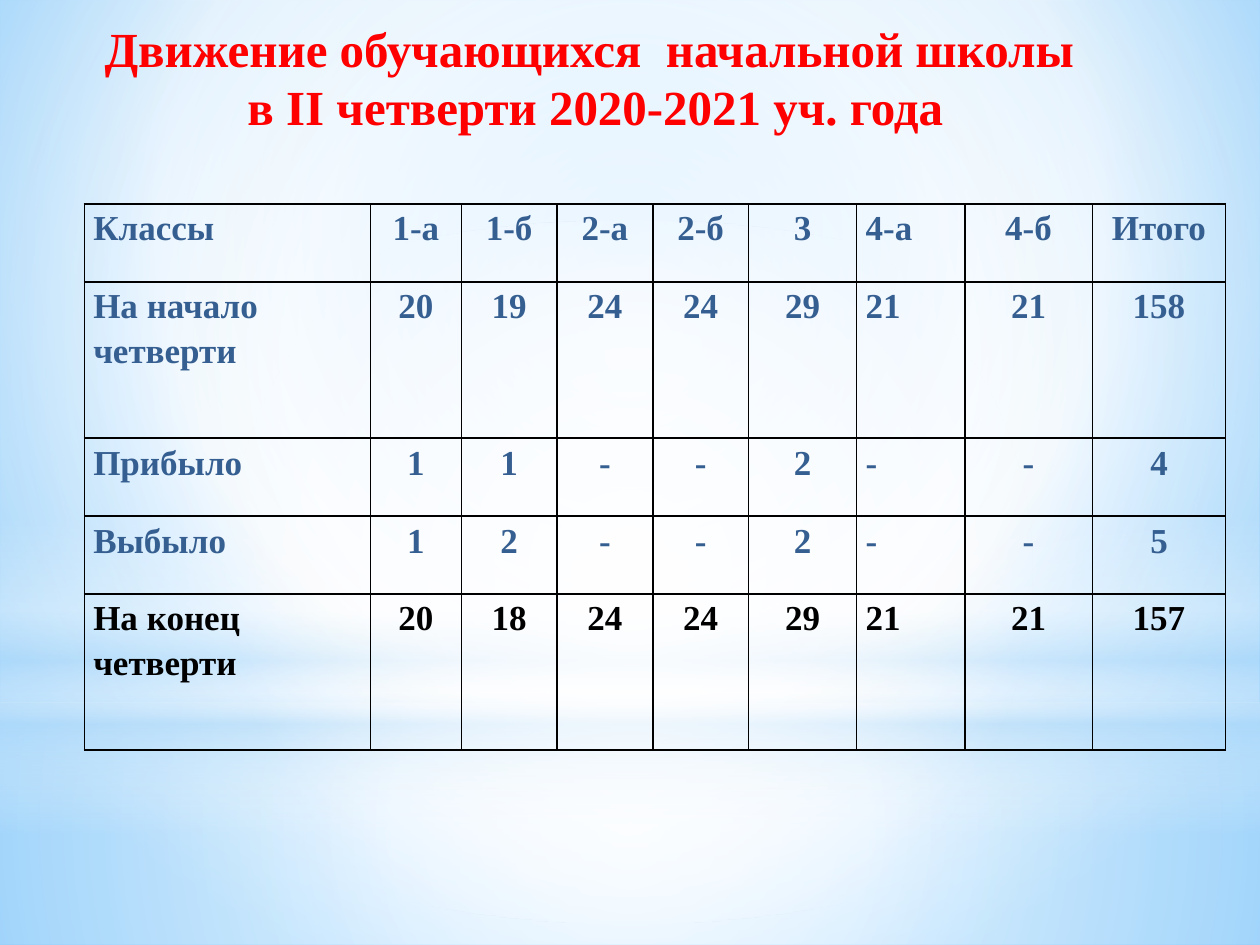
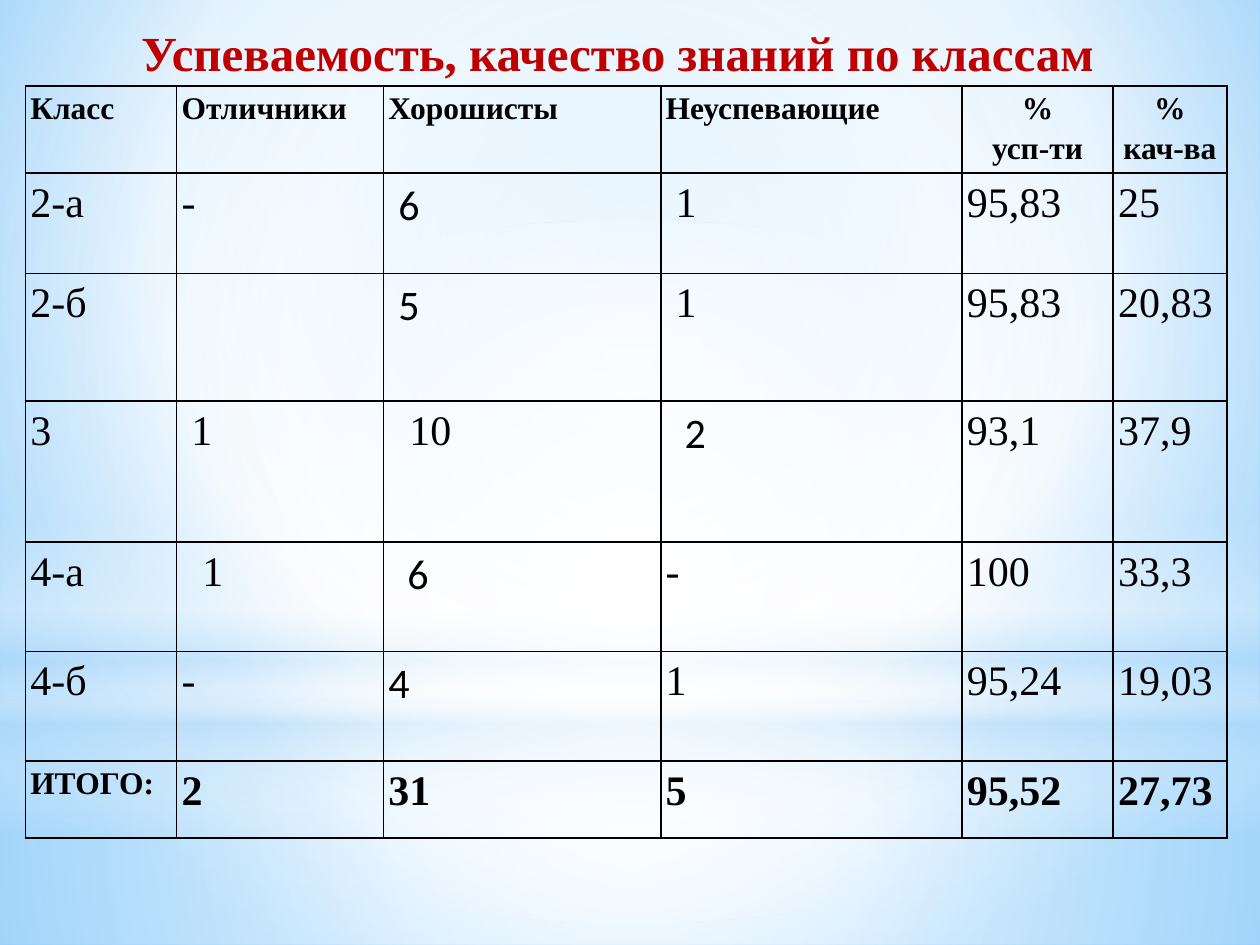
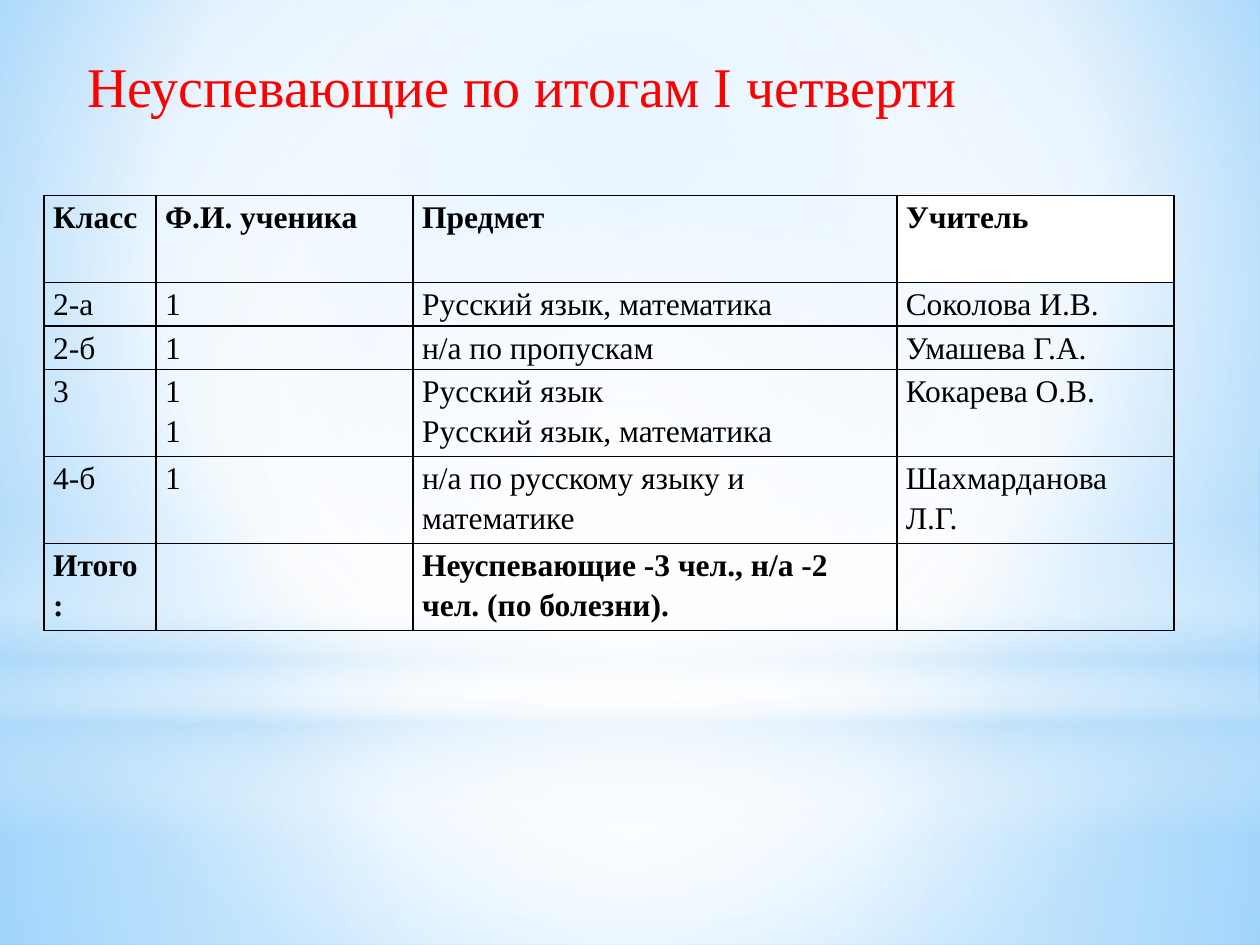
"""Build three slides on pupil numbers and results in a primary school."""
from lxml.etree import SubElement
from pptx import Presentation
from pptx.dml.color import RGBColor
from pptx.enum.shapes import MSO_SHAPE
from pptx.enum.text import MSO_ANCHOR, MSO_AUTO_SIZE, PP_ALIGN
from pptx.oxml import parse_xml
from pptx.oxml.ns import nsdecls, qn
from pptx.util import Cm, Pt

RED = RGBColor(0xFF, 0x00, 0x00)
DARK_RED = RGBColor(0xC0, 0x00, 0x00)
BLUE = RGBColor(0x36, 0x5F, 0x91)
BLACK = RGBColor(0x00, 0x00, 0x00)
WHITE = RGBColor(0xFF, 0xFF, 0xFF)
SKY = RGBColor(0x9E, 0xD5, 0xFF)
PALE_BLUE = RGBColor(0xB4, 0xDC, 0xFA)
BRIGHT_BLUE = RGBColor(0x5B, 0xB9, 0xFF)

SERIF = "Times New Roman"
SANS = "Calibri"
CENTRE = (50, 50, 50, 50)
WIDTH, HEIGHT = 25.4, 19.05

BACKDROP = [(0, SKY, 100), (60, WHITE, 100), (100, BRIGHT_BLUE, 100)]
GLOWS = [
    (MSO_SHAPE.RECTANGLE, 14.17, 4.88, CENTRE,
     [(0, WHITE, 91), (37, WHITE, 76), (100, PALE_BLUE, 79)]),
    (MSO_SHAPE.RECTANGLE, 0, 14.17, CENTRE,
     [(0, WHITE, 89), (48, WHITE, 62), (100, PALE_BLUE, 79)]),
    (MSO_SHAPE.RECTANGLE, 10.46, 6.35, None,
     [(0, WHITE, 0), (29, WHITE, 30), (45, PALE_BLUE, 40),
      (55, WHITE, 26), (65, PALE_BLUE, 60), (100, WHITE, 0)]),
    (MSO_SHAPE.OVAL, 4.45, 14.17, CENTRE,
     [(0, WHITE, 100), (56, WHITE, 0)]),
]

MOVEMENT = [
    ["Классы", "1-а", "1-б", "2-а", "2-б", "3", "4-а", "4-б", "Итого"],
    ["На начало четверти", "20", "19", "24", "24", "29", "21", "21", "158"],
    ["Прибыло", "1", "1", "-", "-", "2", "-", "-", "4"],
    ["Выбыло", "1", "2", "-", "-", "2", "-", "-", "5"],
    ["На конец четверти", "20", "18", "24", "24", "29", "21", "21", "157"],
]
RESULTS = [
    ["Класс", "Отличники", "Хорошисты", "Неуспевающие", "%\nусп-ти", "%\nкач-ва"],
    ["2-а", "-", "6", "1", "95,83", "25"],
    ["2-б", "", "5", "1", "95,83", "20,83"],
    ["3", "1", "10", "2", "93,1", "37,9"],
    ["4-а", "1", "6", "-", "100", "33,3"],
    ["4-б", "-", "4", "1", "95,24", "19,03"],
    ["ИТОГО:", "2", "31", "5", "95,52", "27,73"],
]
RESULT_INDENTS = {(1, 2): 0.2, (1, 3): 0.2, (2, 2): 0.2, (2, 3): 0.2, (3, 1): 0.2,
                  (3, 2): 0.42, (3, 3): 0.38, (4, 1): 0.42, (4, 2): 0.38}
RESULT_SANS = {(1, 2), (2, 2), (3, 3), (4, 2), (5, 2)}
FAILING = [
    ["Класс", "Ф.И. ученика", "Предмет", "Учитель"],
    ["2-а", "1", "Русский язык, математика", "Соколова И.В."],
    ["2-б", "1", "н/а по пропускам", "Умашева Г.А."],
    ["3", "1\n1", "Русский язык\nРусский язык, математика", "Кокарева О.В."],
    ["4-б", "1", "н/а по русскому языку и математике", "Шахмарданова Л.Г."],
    ["Итого:", "", "Неуспевающие -3 чел., н/а -2 чел. (по болезни).", ""],
]


def write(frame, text, size=18, color=BLACK, bold=False, font=SERIF,
          align=PP_ALIGN.LEFT, spacing=1.0, indent=0):
    """Fill a text frame, one paragraph per line of text."""
    for number, line in enumerate(text.split("\n")):
        paragraph = frame.add_paragraph() if number else frame.paragraphs[0]
        paragraph.alignment = align
        paragraph.line_spacing = spacing
        if indent:
            paragraph._p.get_or_add_pPr().set("marL", str(Cm(indent)))
        if line:
            run = paragraph.add_run()
            run.text = line
            run.font.size = Pt(size)
            run.font.bold = bold
            run.font.name = font
            run.font.color.rgb = color


def blend(fill, properties, stops, focus=None):
    """Give a fill gradient stops, round a focus or else from top to bottom."""
    fill.gradient()
    gradient = properties.find(qn("a:gradFill"))
    for child in list(gradient):
        gradient.remove(child)
    stop_list = SubElement(gradient, qn("a:gsLst"))
    for position, color, opacity in stops:
        stop = SubElement(stop_list, qn("a:gs"), pos=str(position * 1000))
        tint = SubElement(stop, qn("a:srgbClr"), val=str(color))
        if opacity < 100:
            SubElement(tint, qn("a:alpha"), val=str(opacity * 1000))
    if focus:
        circle = SubElement(gradient, qn("a:path"), {"path": "circle"})
        sides = {side: str(value * 1000) for side, value in zip("ltrb", focus)}
        SubElement(circle, qn("a:fillToRect"), sides)
    else:
        SubElement(gradient, qn("a:lin"), ang="5400000", scaled="0")


class Deck:
    """Hold the shared style and the current slide."""

    def __init__(self):
        """Start an empty presentation of the right size."""
        self.presentation = Presentation()
        self.presentation.slide_width = Cm(WIDTH)
        self.presentation.slide_height = Cm(HEIGHT)
        self.slide = None

    def add_slide(self):
        """Open a new slide that has only a title."""
        layout = self.presentation.slide_layouts[5]
        self.slide = self.presentation.slides.add_slide(layout)

    def backdrop(self):
        """Put the sky gradient and the glows on the slide master."""
        master = self.presentation.slide_master
        sky = master.background.fill
        blend(sky, master._element.find(".//" + qn("p:bgPr")), BACKDROP, (20, 10, 20, 60))
        for number, (outline, top, height, focus, stops) in enumerate(GLOWS):
            glow = self.slide.shapes.add_shape(outline, 0, Cm(top), Cm(WIDTH), Cm(height))
            glow.shadow.inherit = False
            glow.line.fill.background()
            blend(glow.fill, glow._element.spPr, stops, focus)
            glow._element.nvSpPr.cNvPr.id = 20 + number
            master.shapes._spTree.insert(2 + number, glow._element)

    def title(self, text, left, top, width, height, anchor=MSO_ANCHOR.MIDDLE, **style):
        """Place and write the title."""
        heading = self.slide.shapes.title
        heading.left, heading.top = Cm(left), Cm(top)
        heading.width, heading.height = Cm(width), Cm(height)
        frame = heading.text_frame
        frame.word_wrap = False
        frame.auto_size = MSO_AUTO_SIZE.SHAPE_TO_FIT_TEXT
        frame.vertical_anchor = anchor
        write(frame, text, **style)

    def table(self, entries, left, top, widths, heights, margin, style):
        """Add a ruled table; style gives the text format by row and column."""
        grid = self.slide.shapes.add_table(
            len(heights), len(widths), Cm(left), Cm(top),
            Cm(sum(widths)), Cm(sum(heights))).table
        grid.first_row = grid.horz_banding = False
        for column, width in zip(grid.columns, widths):
            column.width = Cm(width)
        for row, height in zip(grid.rows, heights):
            row.height = Cm(height)
        for r, line in enumerate(entries):
            for c, entry in enumerate(line):
                cell = grid.cell(r, c)
                cell.margin_left = cell.margin_right = Cm(margin)
                cell.margin_top = cell.margin_bottom = 0
                cell.fill.background()
                self.rule(cell)
                write(cell.text_frame, entry, spacing=1.15, **style(r, c))
        return grid

    def rule(self, cell):
        """Draw thin black borders round a cell."""
        properties = cell._tc.get_or_add_tcPr()
        for place, side in enumerate("LRTB"):
            properties.insert(place, parse_xml(
                f'<a:ln{side} {nsdecls("a")} w="{Pt(1)}"><a:solidFill>'
                f'<a:srgbClr val="{BLACK}"/></a:solidFill></a:ln{side}>'))


def movement_style(row, column):
    """Format a cell of the table of pupil movement."""
    return {"size": 20, "bold": True, "color": BLACK if row == 4 else BLUE,
            "align": PP_ALIGN.LEFT if column in (0, 6) else PP_ALIGN.CENTER}


def results_style(row, column):
    """Format a cell of the table of results by class."""
    return {"size": 18 if row == 0 or (row, column) == (6, 0) else 24,
            "bold": row in (0, 6),
            "font": SANS if (row, column) in RESULT_SANS else SERIF,
            "align": PP_ALIGN.CENTER if row == 0 and column > 3 else PP_ALIGN.LEFT,
            "indent": RESULT_INDENTS.get((row, column), 0)}


def failing_style(row, column):
    """Format a cell of the table of failing pupils."""
    return {"bold": row in (0, 5)}


def main():
    """Build and save the slides."""
    deck = Deck()
    headline = {"size": 28, "bold": True, "align": PP_ALIGN.CENTER}

    deck.add_slide()
    deck.backdrop()
    deck.title("Движение обучающихся  начальной школы \nв II четверти 2020-2021 уч. года",
               1.75, 0.23, 20.5, 2.64, color=RED, **headline)
    deck.table(MOVEMENT, 1.7, 4.11, [5.77, 1.83, 1.93, 1.93, 1.93, 2.18, 2.18, 2.57, 2.69],
               [1.57, 3.15, 1.57, 1.57, 3.15], 0.18, movement_style)

    deck.add_slide()
    deck.title("Успеваемость, качество знаний по классам",
               2.49, 0.33, 19.91, 1.45, color=DARK_RED, **headline)
    deck.table(RESULTS, 0.51, 1.73, [3.05, 4.17, 5.59, 6.07, 3.05, 2.29],
               [1.75, 2.03, 2.57, 2.84, 2.21, 2.21, 1.55], 0.1, results_style)

    deck.add_slide()
    deck.title("Неуспевающие по итогам I четверти", 1.5, 0.91, 18.24, 1.63,
               anchor=MSO_ANCHOR.TOP, size=32, color=RED)
    failing = deck.table(FAILING, 0.89, 3.94, [2.26, 5.18, 9.75, 5.59],
                         [1.75, 0.88, 0.88, 1.75, 1.75, 1.75], 0.18, failing_style)
    teacher = failing.cell(0, 3)
    teacher.fill.solid()
    teacher.fill.fore_color.rgb = WHITE

    deck.presentation.save("out.pptx")


if __name__ == "__main__":
    main()
